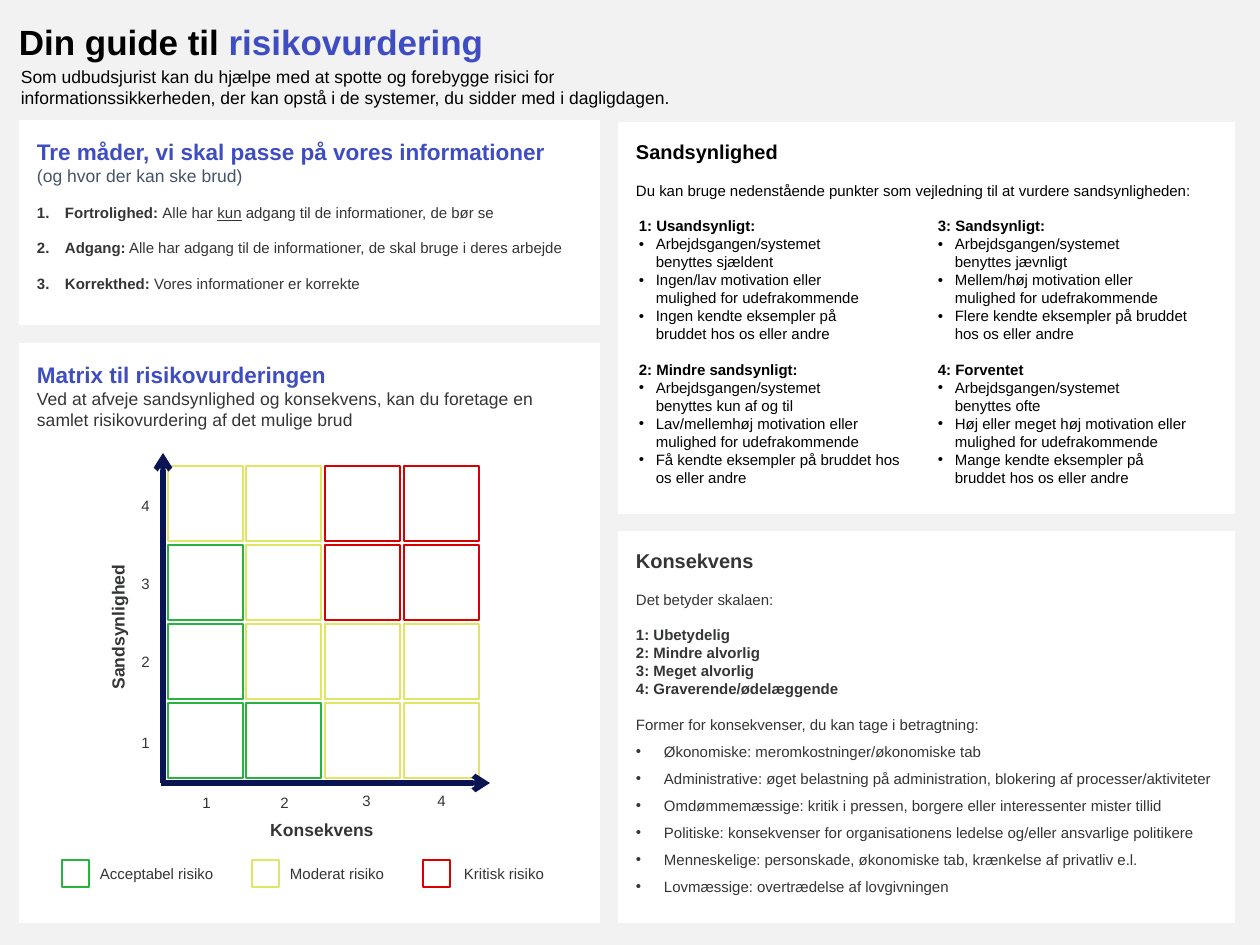
from copy import deepcopy
from dataclasses import dataclass

from lxml.etree import SubElement
from pptx import Presentation
from pptx.dml.color import RGBColor
from pptx.enum.shapes import MSO_CONNECTOR, MSO_SHAPE
from pptx.enum.text import MSO_ANCHOR, PP_ALIGN
from pptx.oxml.ns import qn
from pptx.util import Pt

PX = 10160  # EMU per px, 90 px to the inch


@dataclass
class Style:
    size: int
    color: str
    bold: bool = False
    bullet: str = ""
    indent: int = 0
    spacing: float = 1.0


class Theme:
    font = "Arial"
    page, panel, axis = "F3F2F2", "FFFFFF", "0A1452"
    black, ink, slate, blue = "000000", "343536", "44546A", "3F4DC2"
    green, yellow, red = "29B33E", "E0E564", "D90000"
    gap = 14
    title = Style(28, black, True, spacing=0.9)
    lead = Style(14, black)
    head = Style(18, blue, True)
    sub = Style(14, slate)
    intro = Style(14, ink)
    axis_title = Style(14, ink, True)
    scale_head = Style(16, black, True)
    effect_head = Style(16, ink, True)
    strong, plain = Style(12, black, True), Style(12, black)
    ink_strong, ink_plain = Style(12, ink, True), Style(12, ink)
    point = Style(12, black, bullet="•", indent=17)
    effect = Style(12, ink, bullet="•", indent=28, spacing=1.5)
    number = Style(12, ink, True, bullet="1.", indent=28)


T = Theme
prs = Presentation()
prs.slide_width, prs.slide_height = 1260 * PX, 945 * PX
s = prs.slides.add_slide(prs.slide_layouts[6])
s.background.fill.solid()
s.background.fill.fore_color.rgb = RGBColor.from_string(T.page)


def add_rect(x, y, w, h, line=None):
    sp = s.shapes.add_shape(MSO_SHAPE.RECTANGLE, x * PX, y * PX, w * PX, h * PX)
    sp.shadow.inherit = False
    sp.fill.solid()
    sp.fill.fore_color.rgb = RGBColor.from_string(T.panel)
    if line:
        sp.line.color.rgb = RGBColor.from_string(line)
        sp.line.width = Pt(2.25)
    else:
        sp.line.fill.background()
    return sp


def write(sp, inset, paras, align=PP_ALIGN.LEFT):
    """Fill a shape with (style, text, space before); "|" in a text starts a new run."""
    tf = sp.text_frame
    tf.word_wrap = True
    tf.vertical_anchor = MSO_ANCHOR.TOP
    tf.margin_left = tf.margin_right = inset[0] * PX
    tf.margin_top = tf.margin_bottom = inset[1] * PX
    for i, (style, text, *before) in enumerate(paras):
        p = tf.paragraphs[0] if i == 0 else tf.add_paragraph()
        first, *rest = text.split("|")
        p.text = first
        for part in rest:
            p.add_run().text = part
        p.alignment = align
        p.line_spacing = style.spacing
        if before:
            p.space_before = Pt(before[0])
        if style.bullet:
            pPr = p._p.get_or_add_pPr()
            pPr.set("marL", str(style.indent * PX))
            pPr.set("indent", str(-style.indent * PX))
            SubElement(pPr, qn("a:buFont"), typeface=T.font)
            if style.bullet == "1.":
                SubElement(pPr, qn("a:buAutoNum"), type="arabicPeriod")
            else:
                SubElement(pPr, qn("a:buChar"), char=style.bullet)
        for j, r in enumerate(p.runs):
            r.font.name, r.font.size = T.font, Pt(style.size)
            r.font.bold = style.bold and j == 0
            r.font.color.rgb = RGBColor.from_string(style.color)
        for br in p._p.findall(qn("a:br")):
            br.append(deepcopy(p.runs[0].font._element))
    return tf


# Panels
panel_inset = (18, 18)
write(add_rect(19, 343, 581, 580), panel_inset, [
    (T.head, "Matrix til risikovurderingen"),
    (T.intro, "Ved at afveje sandsynlighed og konsekvens, kan du foretage en "
              "samlet risikovurdering af det mulige brud"),
])
tf = write(add_rect(19, 120, 581, 205), panel_inset, [
    (T.head, "Tre måder, vi skal passe på vores informationer"),
    (T.sub, "(og hvor der kan ske brud)"),
    (T.number, "Fortrolighed: |Alle har |kun| adgang til de informationer, de bør se", T.gap),
    (T.number, "Adgang:| Alle har adgang til de informationer, de skal bruge i deres arbejde", T.gap),
    (T.number, "Korrekthed: |Vores informationer er korrekte", T.gap),
])
tf.paragraphs[2].runs[2].font.underline = True
write(add_rect(618, 122, 617, 392), panel_inset, [
    (T.scale_head, "Sandsynlighed"),
    (T.plain, "Du kan bruge nedenstående punkter som vejledning til at vurdere sandsynligheden:", T.gap),
])
write(add_rect(618, 531, 617, 392), panel_inset, [
    (T.effect_head, "Konsekvens"),
    (T.ink_plain, "Det betyder skalaen:", T.gap),
    (T.ink_strong, "1: Ubetydelig", T.gap),
    (T.ink_strong, "2: Mindre alvorlig"),
    (T.ink_strong, "3: Meget alvorlig"),
    (T.ink_strong, "4: Graverende/ødelæggende"),
    (T.ink_plain, "Former for konsekvenser, du kan tage i betragtning:", T.gap),
    (T.effect, "Økonomiske: meromkostninger/økonomiske tab"),
    (T.effect, "Administrative: øget belastning på administration, blokering af processer/aktiviteter"),
    (T.effect, "Omdømmemæssige: kritik i pressen, borgere eller interessenter mister tillid"),
    (T.effect, "Politiske: konsekvenser for organisationens ledelse og/eller ansvarlige politikere"),
    (T.effect, "Menneskelige: personskade, økonomiske tab, krænkelse af privatliv e.l."),
    (T.effect, "Lovmæssige: overtrædelse af lovgivningen"),
])

# Risk matrix, top row first
risk_color = {"G": T.green, "Y": T.yellow, "R": T.red}
for row, risks in enumerate(["YYRR", "GYRR", "GYYY", "GGYY"]):
    for col, risk in enumerate(risks):
        add_rect(168 + 236 * col // 3, 466 + 79 * row, 75, 75, risk_color[risk])

for x1, y1, x2, y2 in [(163, 783, 163, 453), (161, 783, 490, 783)]:
    c = s.shapes.add_connector(MSO_CONNECTOR.STRAIGHT, x1 * PX, y1 * PX, x2 * PX, y2 * PX)
    c.line.color.rgb = RGBColor.from_string(T.axis)
    c.line.width = Pt(4.25)
    SubElement(c.line._get_or_add_ln(), qn("a:tailEnd"), type="arrow")
    SubElement(c._element.spPr, qn("a:effectLst"))

# Legend boxes
for x, color in [(62, T.green), (252, T.yellow), (423, T.red)]:
    add_rect(x, 860, 27, 27, color)

# Text boxes: left, top, width, height, inset, alignment, paragraphs
flush, padded = (0, 0), (9, 5)
left, center = PP_ALIGN.LEFT, PP_ALIGN.CENTER
boxes = [
    (12, 61, 740, 51, padded, left, [
        (T.lead, "Som udbudsjurist kan du hjælpe med at spotte og forebygge risici for "
                 "informationssikkerheden, der kan opstå i de systemer, du sidder med i dagligdagen.")]),
    (249, 819, 146, 22, flush, center, [(T.axis_title, "Konsekvens")]),
    (630, 212, 287, 282, padded, left, [
        (T.strong, "1: Usandsynligt:"),
        (T.point, "Arbejdsgangen/systemet\nbenyttes sjældent"),
        (T.point, "Ingen/lav motivation eller\nmulighed for udefrakommende"),
        (T.point, "Ingen kendte eksempler på\nbruddet hos os eller andre"),
        (T.strong, "2: Mindre sandsynligt:", T.gap),
        (T.point, "Arbejdsgangen/systemet\nbenyttes kun af og til"),
        (T.point, "Lav/mellemhøj motivation eller mulighed for udefrakommende"),
        (T.point, "Få kendte eksempler på bruddet hos os eller andre")]),
    (929, 212, 276, 282, padded, left, [
        (T.strong, "3: Sandsynligt:"),
        (T.point, "Arbejdsgangen/systemet\nbenyttes jævnligt"),
        (T.point, "Mellem/høj motivation eller mulighed for udefrakommende"),
        (T.point, "Flere kendte eksempler på bruddet hos os eller andre"),
        (T.strong, "4: Forventet", T.gap),
        (T.point, "Arbejdsgangen/systemet\nbenyttes ofte"),
        (T.point, "Høj eller meget høj motivation eller mulighed for udefrakommende"),
        (T.point, "Mange kendte eksempler på bruddet hos os eller andre")]),
]
for x, label in [(100, "Acceptabel risiko"), (290, "Moderat risiko"), (464, "Kritisk risiko")]:
    boxes.append((x, 865, 122, 18, flush, left, [(T.ink_plain, label)]))
ticks = [(192, 794), (270, 794), (352, 792), (427, 792)]
ticks += [(131, 734), (131, 653), (131, 575), (131, 497)]
for i, (x, y) in enumerate(ticks):
    boxes.append((x, y, 29, 18, flush, center, [(T.ink_plain, str(i % 4 + 1))]))
for x, y, w, h, inset, align, paras in boxes:
    write(s.shapes.add_textbox(x * PX, y * PX, w * PX, h * PX), inset, paras, align)

y_title = s.shapes.add_textbox(45 * PX, 616 * PX, 146 * PX, 22 * PX)
y_title.rotation = 270
write(y_title, flush, [(T.axis_title, "Sandsynlighed")], center)

title = s.shapes.add_textbox(19 * PX, 25 * PX, 963 * PX, 36 * PX)
tf = write(title, flush, [(T.title, "Din guide til |risikovurdering")])
topic = tf.paragraphs[0].runs[1]
topic.font.bold = True
topic.font.color.rgb = RGBColor.from_string(T.blue)

prs.save("out.pptx")
